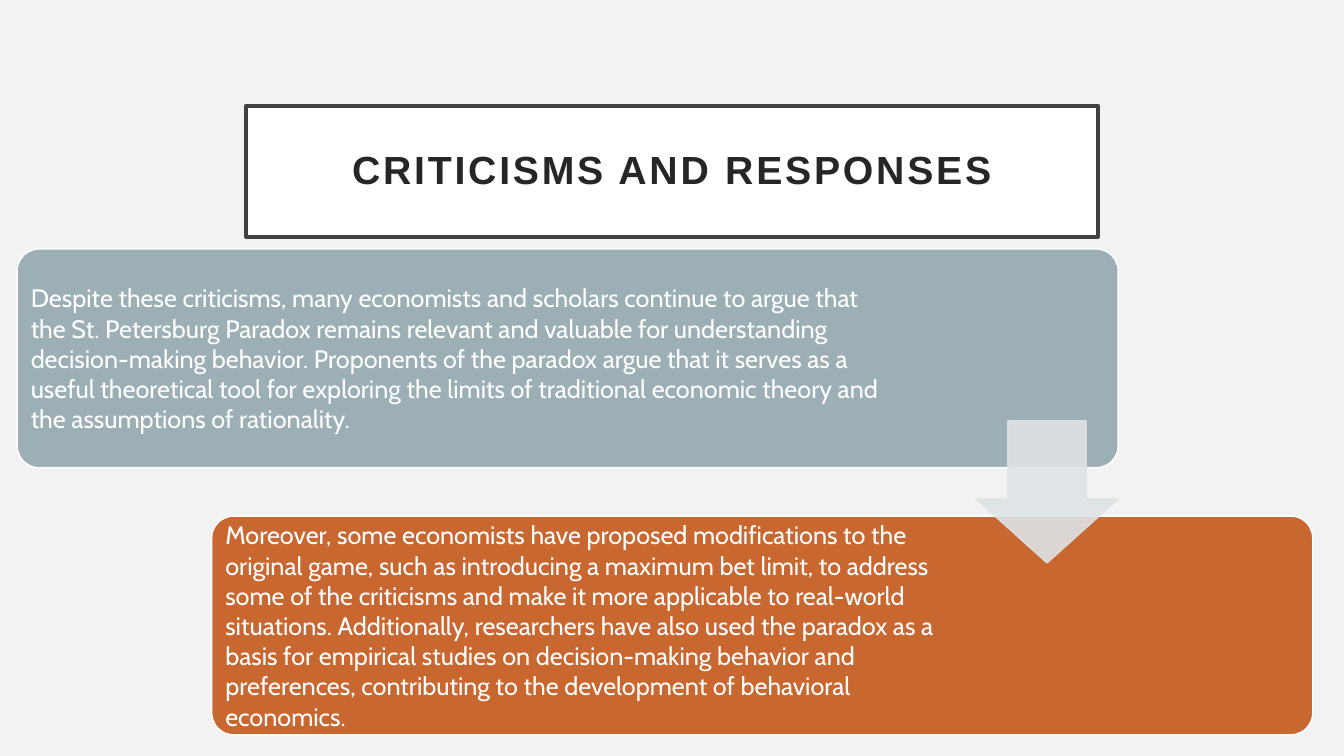
import pptx
import pptx.dml.color
import pptx.enum.shapes
import pptx.enum.text
import pptx.oxml.ns
import pptx.util
from lxml import etree

RGBColor = pptx.dml.color.RGBColor
Inches = pptx.util.Inches
Pt = pptx.util.Pt
Shape = pptx.enum.shapes.MSO_SHAPE
Align = pptx.enum.text.PP_ALIGN

PAPER = RGBColor(0xF2, 0xF2, 0xF2)
WHITE = RGBColor(0xFF, 0xFF, 0xFF)
FRAME = RGBColor(0x40, 0x40, 0x40)
INK = RGBColor(0x26, 0x26, 0x26)
SLATE = RGBColor(0x9B, 0xAF, 0xB5)
RUST = RGBColor(0xC9, 0x67, 0x31)
MIST = RGBColor(0xDE, 0xE3, 0xE5)

TITLE = "CRITICISMS AND RESPONSES"
CARDS = [
    (SLATE, 8.68,
     "Despite these criticisms, many economists and scholars continue to argue that "
     "the St. Petersburg Paradox remains relevant and valuable for understanding "
     "decision-making behavior. Proponents of the paradox argue that it serves as a "
     "useful theoretical tool for exploring the limits of traditional economic theory "
     "and the assumptions of rationality."),
    (RUST, 7.46,
     "Moreover, some economists have proposed modifications to the original game, such "
     "as introducing a maximum bet limit, to address some of the criticisms and make it "
     "more applicable to real-world situations. Additionally, researchers have also used "
     "the paradox as a basis for empirical studies on decision-making behavior and "
     "preferences, contributing to the development of behavioral economics."),
]

WIDTH, HEIGHT = 13.33, 7.5
TITLE_WIDTH, TITLE_HEIGHT, TITLE_TOP = 8.45, 1.3, 1.05
CARD_LEFT, CARD_TOP = 0.17, 2.47
CARD_WIDTH, CARD_HEIGHT = 10.92, 2.17
STEP_RIGHT, STEP_DOWN = 1.93, 2.65
TEXT_INSET = 0.065
ARROW_SIZE = 1.41


def add_block(page, kind, left, top, width, height, fill, line, weight, adjustments=()):
    block = page.shapes.add_shape(
        kind, Inches(left), Inches(top), Inches(width), Inches(height))
    block.shadow.inherit = False
    block.fill.solid()
    block.fill.fore_color.rgb = fill
    block.line.color.rgb = line
    block.line.width = Pt(weight)
    for index, value in enumerate(adjustments):
        block.adjustments[index] = value
    return block


def write(box, text, margin, align, font_name, size, color, bold=False):
    frame = box.text_frame
    frame.word_wrap = True
    frame.vertical_anchor = pptx.enum.text.MSO_ANCHOR.MIDDLE
    frame.margin_left = frame.margin_right = Inches(margin)
    frame.margin_top = frame.margin_bottom = Inches(margin)
    para = frame.paragraphs[0]
    para.text = text
    para.alignment = align
    para.font.name = font_name
    para.font.size = Pt(size)
    para.font.bold = bold
    para.font.color.rgb = color
    return para


def main():
    deck = pptx.Presentation()
    deck.slide_width, deck.slide_height = Inches(WIDTH), Inches(HEIGHT)
    page = deck.slides.add_slide(deck.slide_layouts[6])
    page.background.fill.solid()
    page.background.fill.fore_color.rgb = PAPER

    title_box = add_block(page, Shape.RECTANGLE, (WIDTH - TITLE_WIDTH) / 2, TITLE_TOP,
                          TITLE_WIDTH, TITLE_HEIGHT, WHITE, FRAME, 2.5)
    title = write(title_box, TITLE, 0.2, Align.CENTER, "Arial", 28, INK, True)
    title.line_spacing = 0.9
    title.runs[0].font._element.set("spc", "200")

    for index, (color, text_width, text) in enumerate(CARDS):
        left = CARD_LEFT + index * STEP_RIGHT
        top = CARD_TOP + index * STEP_DOWN
        add_block(page, Shape.ROUNDED_RECTANGLE, left, top, CARD_WIDTH, CARD_HEIGHT,
                  color, WHITE, 1, [0.1])
        box = page.shapes.add_textbox(
            Inches(left + TEXT_INSET), Inches(top + TEXT_INSET),
            Inches(text_width), Inches(CARD_HEIGHT - 2 * TEXT_INSET))
        write(box, text, 0.07, Align.LEFT, "Cabin", 18, WHITE)

    gap_middle = CARD_TOP + (CARD_HEIGHT + STEP_DOWN) / 2
    arrow = add_block(page, Shape.DOWN_ARROW, CARD_LEFT + CARD_WIDTH - ARROW_SIZE,
                      gap_middle - ARROW_SIZE / 2, ARROW_SIZE, ARROW_SIZE,
                      MIST, MIST, 1, [0.55, 0.45])
    qn = pptx.oxml.ns.qn
    for color in arrow._element.spPr.iter(qn("a:srgbClr")):
        etree.SubElement(color, qn("a:alpha")).set("val", "90000")

    deck.save("out.pptx")


if __name__ == "__main__":
    main()
